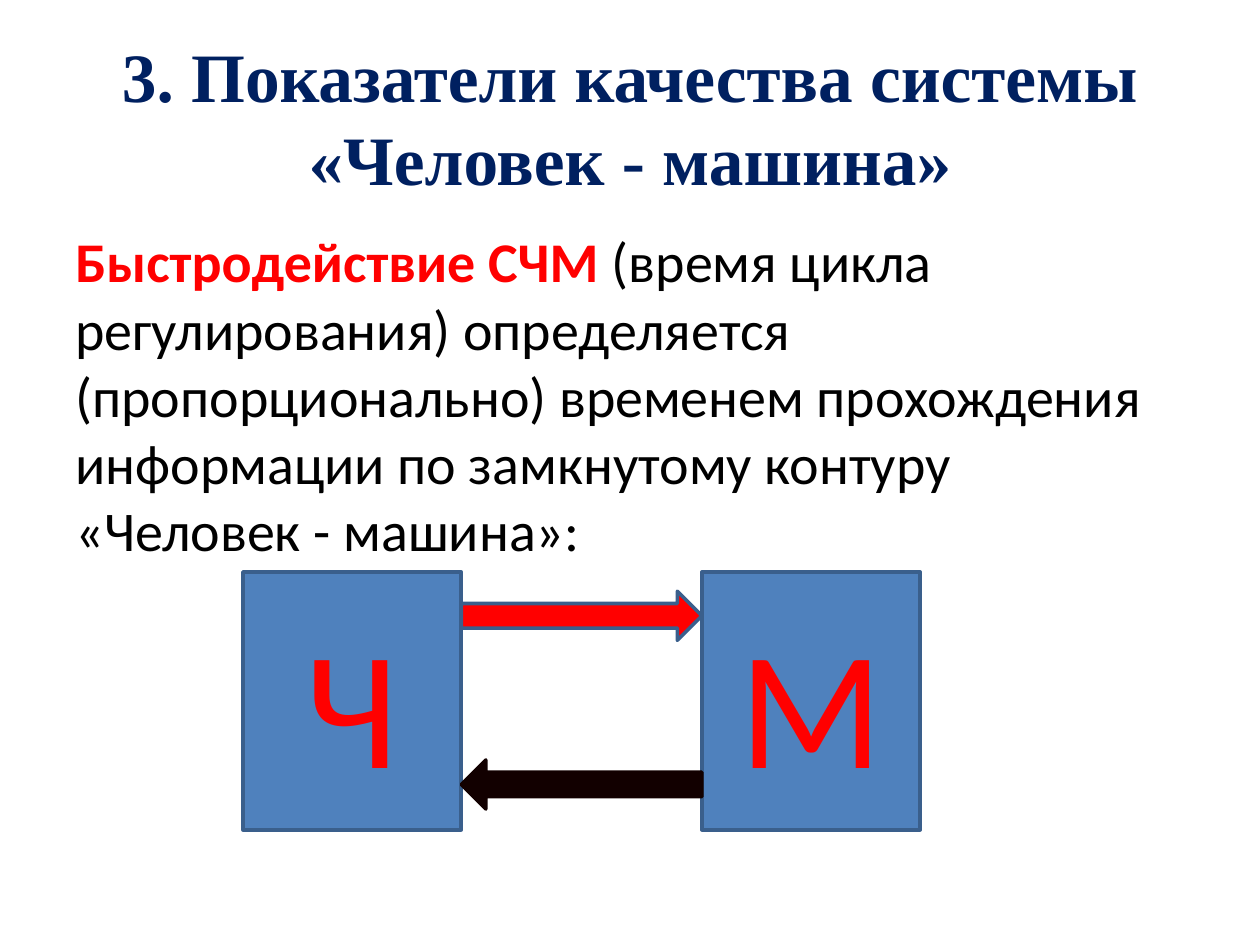
"""Build the slide on the response speed of the human-machine system."""
from pptx import Presentation
from pptx.dml.color import RGBColor
from pptx.enum.shapes import MSO_SHAPE
from pptx.enum.text import MSO_ANCHOR, PP_ALIGN
from pptx.util import Cm, Pt

TITLE = "3. Показатели качества системы «Человек - машина»"
STATEMENT = [
    ("Быстродействие СЧМ ", "accent", True),
    ("(время цикла регулирования) определяется (пропорционально) временем "
     "прохождения информации по замкнутому контуру «Человек - машина»:", "text", False),
]
BLOCKS = ["Ч", "М"]
SIGNALS = [
    (MSO_SHAPE.RIGHT_ARROW, 11.92, "accent", "outline"),
    (MSO_SHAPE.LEFT_ARROW, 15.32, "feedback", "feedback"),
]

THEME = {
    "title": RGBColor(0x00, 0x20, 0x60),
    "accent": RGBColor(0xFF, 0x00, 0x00),
    "text": RGBColor(0x00, 0x00, 0x00),
    "block": RGBColor(0x4F, 0x81, 0xBD),
    "outline": RGBColor(0x3A, 0x5F, 0x8C),
    "feedback": RGBColor(0x12, 0x00, 0x00),
    "title_font": "Times New Roman",
    "body_font": "Calibri",
    "title_size": 39.6,
    "body_size": 32,
    "block_size": 96,
}

MARGIN, CONTENT_WIDTH = 1.27, 22.86
BLOCK_LEFT, BLOCK_TOP, BLOCK_WIDTH, BLOCK_HEIGHT = 4.9, 11.53, 4.4, 5.2
GAP, SIGNAL_HEIGHT = 4.85, 0.99


def style(run, font, size, color, bold=False):
    run.font.name = THEME[font]
    run.font.size = Pt(THEME[size])
    run.font.color.rgb = THEME[color]
    run.font.bold = bold


def add_figure(slide, kind, box, fill, line):
    figure = slide.shapes.add_shape(kind, *map(Cm, box))
    figure.shadow.inherit = False
    figure.fill.solid()
    figure.fill.fore_color.rgb = THEME[fill]
    figure.line.color.rgb = THEME[line]
    figure.line.width = Pt(2)
    return figure


def add_title(slide):
    title = slide.shapes.title
    title.left, title.top, title.width, title.height = map(
        Cm, (MARGIN, 0.76, CONTENT_WIDTH, 3.18))
    title.text_frame.text = TITLE
    title.text_frame.vertical_anchor = MSO_ANCHOR.MIDDLE
    heading = title.text_frame.paragraphs[0]
    heading.alignment = PP_ALIGN.CENTER
    style(heading.runs[0], "title_font", "title_size", "title", True)


def add_statement(slide):
    statement = slide.shapes.add_textbox(*map(Cm, (MARGIN, 4.45, CONTENT_WIDTH, 12.57)))
    statement.text_frame.word_wrap = True
    paragraph = statement.text_frame.paragraphs[0]
    paragraph.space_before = Pt(6.4)
    for words, color, bold in STATEMENT:
        run = paragraph.add_run()
        run.text = words
        style(run, "body_font", "body_size", color, bold)


def add_loop(slide):
    for index, letter in enumerate(BLOCKS):
        left = BLOCK_LEFT + index * (BLOCK_WIDTH + GAP)
        block = add_figure(slide, MSO_SHAPE.RECTANGLE,
                           (left, BLOCK_TOP, BLOCK_WIDTH, BLOCK_HEIGHT), "block", "outline")
        block.text_frame.text = letter
        block.text_frame.vertical_anchor = MSO_ANCHOR.MIDDLE
        label = block.text_frame.paragraphs[0]
        label.alignment = PP_ALIGN.CENTER
        style(label.runs[0], "body_font", "block_size", "accent")
    for kind, top, fill, line in SIGNALS:
        add_figure(slide, kind, (BLOCK_LEFT + BLOCK_WIDTH, top, GAP, SIGNAL_HEIGHT), fill, line)


def main():
    deck = Presentation()
    deck.slide_width, deck.slide_height = Cm(25.4), Cm(19.05)
    slide = deck.slides.add_slide(deck.slide_layouts[5])
    add_title(slide)
    add_statement(slide)
    add_loop(slide)
    deck.save("out.pptx")


if __name__ == "__main__":
    main()
